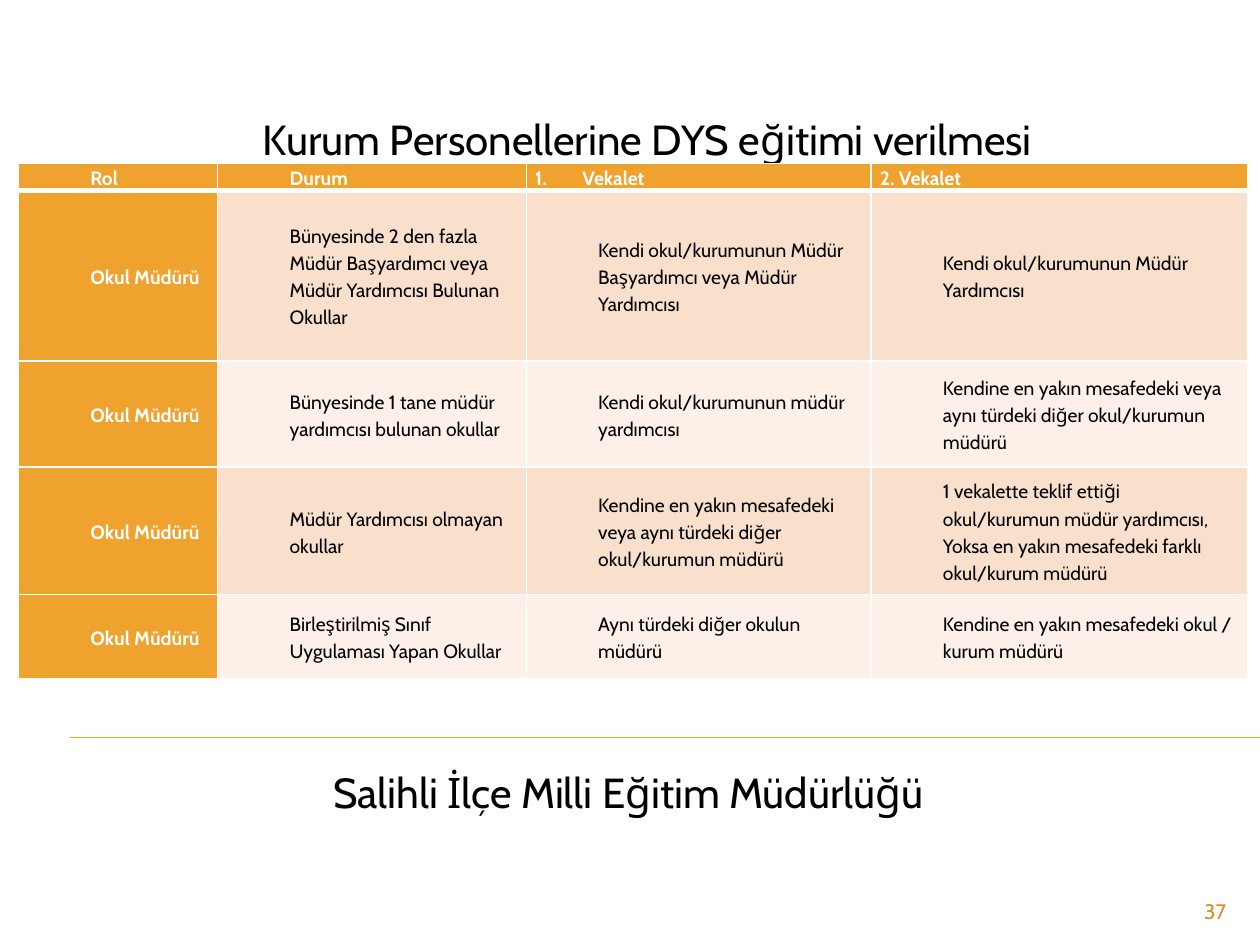
from lxml import etree
from pptx import Presentation
from pptx.dml.color import RGBColor as Rgb
from pptx.enum.shapes import MSO_CONNECTOR as Link
from pptx.enum.text import MSO_ANCHOR as Anchor, PP_ALIGN as Align
from pptx.oxml.ns import qn
from pptx.util import Cm, Pt

FONT = "Cabin"
GOLD, WHITE, BLACK = "F0A22E", "FFFFFF", "000000"
BANDS = ["F9E0CD", "FCF0E8"]

COLS = [4.02, 6.22, 6.95, 7.59]
ROWS = [0.43, 3.44, 2.14, 2.57, 1.7]
ROLE = "Okul Müdürü"
NEAR = "Kendine en yakın mesafedeki veya aynı türdeki diğer okul/kurumun müdürü"
CELLS = [
    ["Rol", "Durum", "Vekalet", "2. Vekalet"],
    [ROLE,
     "Bünyesinde 2 den fazla Müdür Başyardımcı veya Müdür Yardımcısı Bulunan Okullar",
     "Kendi okul/kurumunun Müdür Başyardımcı veya Müdür Yardımcısı",
     "Kendi okul/kurumunun Müdür Yardımcısı"],
    [ROLE, "Bünyesinde 1 tane müdür yardımcısı bulunan okullar",
     "Kendi okul/kurumunun müdür yardımcısı", NEAR],
    [ROLE, "Müdür Yardımcısı olmayan okullar", NEAR,
     "1 vekalette teklif ettiği okul/kurumun müdür yardımcısı,\n"
     "Yoksa en yakın mesafedeki farklı okul/kurum müdürü"],
    [ROLE, "Birleştirilmiş Sınıf Uygulaması Yapan Okullar",
     "Aynı türdeki diğer okulun müdürü",
     "Kendine en yakın mesafedeki okul / kurum müdürü"],
]


def paint(fmt, color):
    fmt.solid()
    fmt.fore_color.rgb = Rgb.from_string(color)


def write(frame, text, size=24, color=BLACK, bold=False, align=Align.LEFT,
          space=None, indent=0, number=False):
    """Fill a text frame, one paragraph for each line of text."""
    frame.word_wrap = True
    for i, line in enumerate(text.split("\n")):
        para = frame.add_paragraph() if i else frame.paragraphs[0]
        para.alignment = align
        if space:
            para.line_spacing = space
        props = para._p.get_or_add_pPr()
        props.set("marL", str(Cm(indent)))
        props.set("indent", str(-Cm(indent) if number else 0))
        if number:
            etree.SubElement(props, qn("a:buAutoNum"), type="arabicPeriod")
        run = para.add_run()
        run.text = line
        font = run.font
        font.name, font.size, font.bold = FONT, Pt(size), bold
        paint(font.fill, color)


def label(slide, box, text, **look):
    shape = slide.shapes.add_textbox(*map(Cm, box))
    write(shape.text_frame, text, **look)


def edge(cell, side, width):
    """Draw one white cell border."""
    line = etree.SubElement(cell._tc.get_or_add_tcPr(), qn("a:ln" + side),
                            w=str(Pt(width)))
    fill = etree.SubElement(line, qn("a:solidFill"))
    etree.SubElement(fill, qn("a:srgbClr"), val=WHITE)


def grid(slide, left, top):
    """Table of roles and their deputies."""
    table = slide.shapes.add_table(len(ROWS), len(COLS), Cm(left), Cm(top),
                                   Cm(sum(COLS)), Cm(sum(ROWS))).table
    for col, width in zip(table.columns, COLS):
        col.width = Cm(width)
    for row, height in zip(table.rows, ROWS):
        row.height = Cm(height)

    for r, texts in enumerate(CELLS):
        for c, text in enumerate(texts):
            cell = table.cell(r, c)
            cell.vertical_anchor = Anchor.MIDDLE
            cell.margin_left = cell.margin_right = Cm(0.18)
            cell.margin_top = cell.margin_bottom = 0

            # The rule under the heading row is thicker
            for side in "LRTB":
                thick = (r, side) in [(0, "B"), (1, "T")]
                edge(cell, side, 3 if thick else 1)

            head = r == 0 or c == 0
            paint(cell.fill, GOLD if head else BANDS[(r - 1) % 2])
            indent = {2: 0.95, 3: 0}.get(c, 1.27) if r == 0 else 1.27
            write(cell.text_frame, text, size=11, bold=head,
                  color=WHITE if head else BLACK, space=1.15,
                  indent=indent, number=(r, c) == (0, 2))


def footer(slide, left, top, right):
    """Rule, office name and page number."""
    rule = slide.shapes.add_connector(Link.STRAIGHT, Cm(left), Cm(top),
                                      Cm(right), Cm(top))
    paint(rule.line.fill, GOLD)
    rule.line.width = Pt(0.75)
    etree.SubElement(rule._element.spPr, qn("a:effectLst"))
    label(slide, (left + 2.01, top + 0.46, 18.67, 1.27),
          "Salihli İlçe Milli Eğitim Müdürlüğü ", align=Align.CENTER)
    label(slide, (right - 2.54, top + 3.12, 2.11, 0.69), "37", size=12,
          color="D48F29", align=Align.RIGHT)


def main():
    deck = Presentation()
    deck.slide_width, deck.slide_height = Cm(25.4), Cm(19.05)
    slide = deck.slides.add_slide(deck.slide_layouts[6])
    footer(slide, 1.42, 14.86, 25.4)
    label(slide, (3.76, 2.16, 18.59, 2.31),
          "Kurum Personellerine DYS eğitimi verilmesi", align=Align.CENTER)
    grid(slide, 0.37, 3.3)
    deck.save("out.pptx")


if __name__ == "__main__":
    main()
